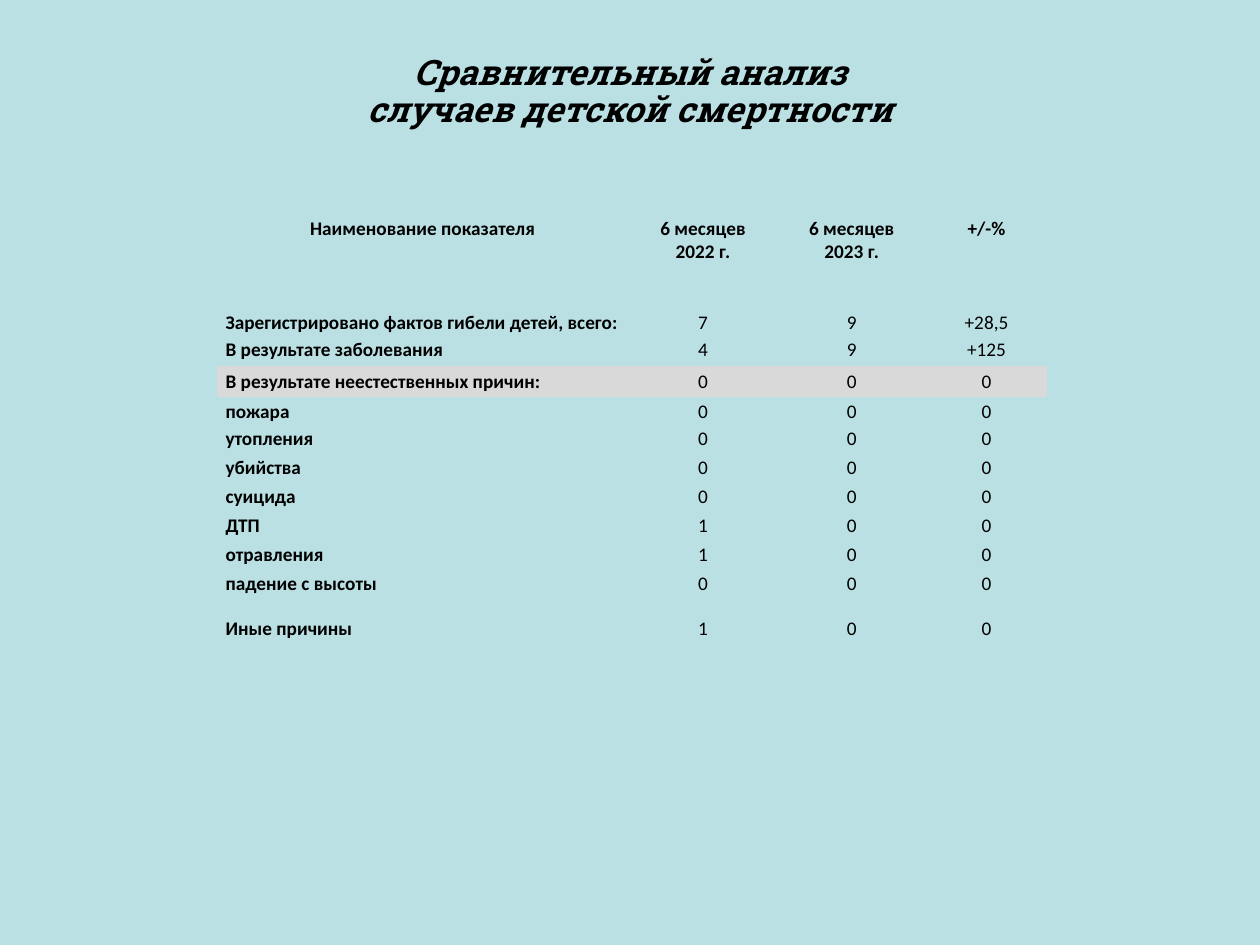
from pptx import Presentation
from pptx.dml.color import RGBColor
from pptx.enum.text import MSO_ANCHOR, PP_ALIGN
from pptx.util import Inches, Pt

BACKGROUND = RGBColor(0xBB, 0xE0, 0xE3)
BLACK = RGBColor(0, 0, 0)
GREY = RGBColor(0xD9, 0xD9, 0xD9)
NO_STYLE_NO_GRID = "{2D5ABB26-0587-4C30-8999-92F81FD0307C}"

# Content: a line break inside a cell starts a new paragraph
TITLE = "Сравнительный анализ\vслучаев детской смертности"
ROWS = [
    ("Наименование показателя", "6 месяцев\n2022 г.", "6 месяцев\n2023 г.", "+/-%"),
    ("Зарегистрировано фактов гибели детей, всего:", "7", "9", "+28,5"),
    ("В результате заболевания", "4", "9", "+125"),
    ("В результате неестественных причин:", "0", "0", "0"),
    ("пожара", "0", "0", "0"),
    ("утопления", "0", "0", "0"),
    ("убийства", "0", "0", "0"),
    ("суицида", "0", "0", "0"),
    ("ДТП", "1", "0", "0"),
    ("отравления", "1", "0", "0"),
    ("падение с высоты\nИные причины", "0\n1", "0\n0", "0\n0"),
]
HEADER_ROW, TOTAL_ROW, SHADED_ROW = 0, 1, 3
COL_WIDTHS = [3.27, 1.18, 1.18, 0.96]
ROW_HEIGHTS = [0.37, 0.56, 0.25, 0.24, 0.21] + [0.23] * 5 + [0.57]


def set_font(p, name, size, bold, italic=False):
    p.font.name = name
    p.font.size = Pt(size)
    p.font.bold = bold
    p.font.italic = italic
    p.font.color.rgb = BLACK


def fill_cell(cell, text, row, col):
    cell.margin_left = cell.margin_right = Inches(0.07)
    cell.margin_top = cell.margin_bottom = 0
    cell.vertical_anchor = MSO_ANCHOR.BOTTOM if row == TOTAL_ROW else MSO_ANCHOR.TOP
    if row == SHADED_ROW:
        cell.fill.solid()
        cell.fill.fore_color.rgb = GREY
    else:
        cell.fill.background()
    cell.text = text
    is_header = row == HEADER_ROW
    for p in cell.text_frame.paragraphs:
        p.alignment = PP_ALIGN.CENTER if is_header or col else PP_ALIGN.JUSTIFY
        if not is_header:
            p.line_spacing = 1.15
            p.space_after = Pt(10)
        set_font(p, "Calibri", 11, bold=is_header or col == 0)


prs = Presentation()
prs.slide_width, prs.slide_height = Inches(10), Inches(7.5)
s = prs.slides.add_slide(prs.slide_layouts[5])
s.background.fill.solid()
s.background.fill.fore_color.rgb = BACKGROUND

# Title
title = s.shapes.title
title.left, title.top = Inches(0.5), Inches(0.3)
title.width, title.height = Inches(9), Inches(0.87)
tf = title.text_frame
tf.text = TITLE
tf.vertical_anchor = MSO_ANCHOR.MIDDLE
p = tf.paragraphs[0]
p.alignment = PP_ALIGN.CENTER
p.line_spacing = 0.9
set_font(p, "Roboto Slab", 20, bold=True, italic=True)

# Table
frame = s.shapes.add_table(len(ROWS), len(COL_WIDTHS), Inches(1.72), Inches(1.72),
                           Inches(sum(COL_WIDTHS)), Inches(sum(ROW_HEIGHTS)))
table = frame.table
table.first_row = table.horz_banding = False
table._tbl.tblPr[0].text = NO_STYLE_NO_GRID
for column, width in zip(table.columns, COL_WIDTHS):
    column.width = Inches(width)
for r, (values, height) in enumerate(zip(ROWS, ROW_HEIGHTS)):
    table.rows[r].height = Inches(height)
    for c, text in enumerate(values):
        fill_cell(table.cell(r, c), text, r, c)

prs.save("out.pptx")
